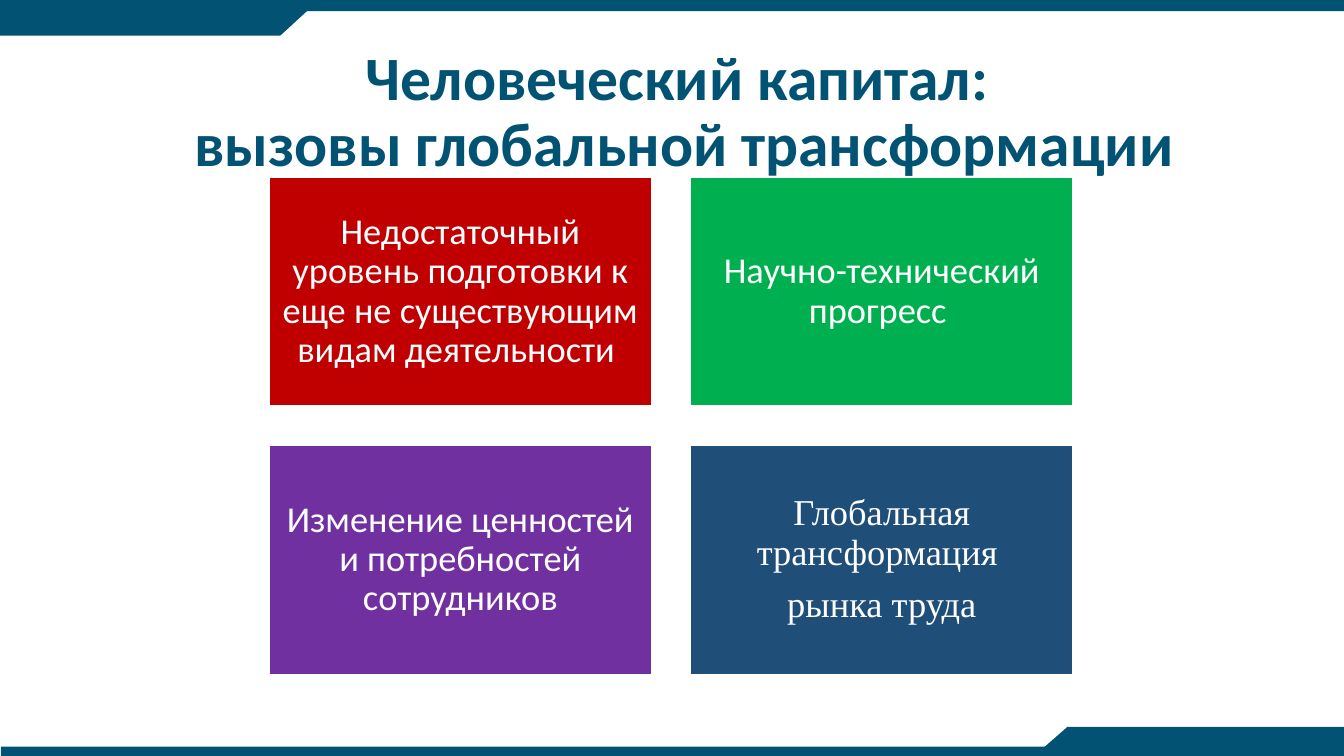
from pptx import Presentation
from pptx.dml.color import RGBColor
from pptx.enum.shapes import MSO_SHAPE
from pptx.enum.text import MSO_ANCHOR, PP_ALIGN
from pptx.util import Pt

RECTANGLE = MSO_SHAPE.RECTANGLE
TRIANGLE = MSO_SHAPE.FLOWCHART_MERGE
MIDDLE = MSO_ANCHOR.MIDDLE
CENTER = PP_ALIGN.CENTER

COLORS = {
    "teal": "025373",
    "white": "FFFFFF",
    "red": "C00000",
    "green": "00B050",
    "purple": "7030A0",
    "navy": "1F4E79",
}

SLIDE_WIDTH, SLIDE_HEIGHT = 960, 540
CARD_WIDTH, CARD_HEIGHT = 273.6, 164.2
CARD_LEFT, CARD_TOP = 192.2, 126.2
CARD_GAP = 27.4
COLUMNS = 2

TITLE = "Человеческий капитал: \vвызовы глобальной трансформации"
CARDS = [
    ("red", "Calibri",
     ["Недостаточный уровень подготовки к еще не существующим видам деятельности "]),
    ("green", "Calibri", ["Научно-технический прогресс "]),
    ("purple", "Calibri", ["Изменение ценностей и потребностей сотрудников"]),
    ("navy", "Times New Roman", ["Глобальная трансформация ", "рынка труда"]),
]


def rgb(name):
    return RGBColor.from_string(COLORS[name])


def add_filled(page, kind, left, top, width, height, color):
    shape = page.shapes.add_shape(kind, Pt(left), Pt(top), Pt(width), Pt(height))
    shape.shadow.inherit = False
    shape.fill.solid()
    shape.fill.fore_color.rgb = rgb(color)
    shape.line.fill.background()
    return shape


def write(frame, lines, font, size, color, bold=False, space_after=0, inset=(7.2, 3.6)):
    frame.word_wrap = True
    frame.vertical_anchor = MIDDLE
    frame.margin_left = frame.margin_right = Pt(inset[0])
    frame.margin_top = frame.margin_bottom = Pt(inset[1])
    frame.text = "\n".join(lines)
    for para in frame.paragraphs:
        para.alignment = CENTER
        para.line_spacing = 0.9
        para.space_after = Pt(space_after)
        para.font.name = font
        para.font.size = Pt(size)
        para.font.bold = bold
        para.font.color.rgb = rgb(color)


def add_edge_bands(page):
    """Draw the thin bars and slanted tabs along the top and bottom edges."""
    add_filled(page, RECTANGLE, 0, 0, SLIDE_WIDTH, 8, "teal")
    add_filled(page, RECTANGLE, 0.7, 533.3, SLIDE_WIDTH - 0.7, 6.7, "teal")
    add_filled(page, RECTANGLE, 0, 3.6, 200, 21.8, "teal")
    add_filled(page, TRIANGLE, 176.5, 3.6, 47.5, 21.8, "teal")
    add_filled(page, RECTANGLE, 762.5, 519.2, SLIDE_WIDTH - 762.5, 20.8, "teal")
    slant = add_filled(page, TRIANGLE, 738.7, 519.2, 47.5, 20.8, "teal")
    slant.rotation = 180


def add_card(page, index, color, font, lines):
    row, column = divmod(index, COLUMNS)
    left = CARD_LEFT + column * (CARD_WIDTH + CARD_GAP)
    top = CARD_TOP + row * (CARD_HEIGHT + CARD_GAP)
    card = add_filled(page, RECTANGLE, left, top, CARD_WIDTH, CARD_HEIGHT, color)
    card.line.color.rgb = rgb("white")
    card.line.width = Pt(1.5)
    write(card.text_frame, lines, font, 26, "white", space_after=9.1, inset=(7.8, 7.8))


def add_title(page):
    box = page.shapes.add_textbox(Pt(66), Pt(28.8), Pt(846), Pt(104.4))
    write(box.text_frame, [TITLE], "Calibri", 44, "teal", bold=True)


def main():
    deck = Presentation()
    deck.slide_width = Pt(SLIDE_WIDTH)
    deck.slide_height = Pt(SLIDE_HEIGHT)
    page = deck.slides.add_slide(deck.slide_layouts[6])
    add_edge_bands(page)
    for index, (color, font, lines) in enumerate(CARDS):
        add_card(page, index, color, font, lines)
    add_title(page)
    deck.save("out.pptx")


if __name__ == "__main__":
    main()
